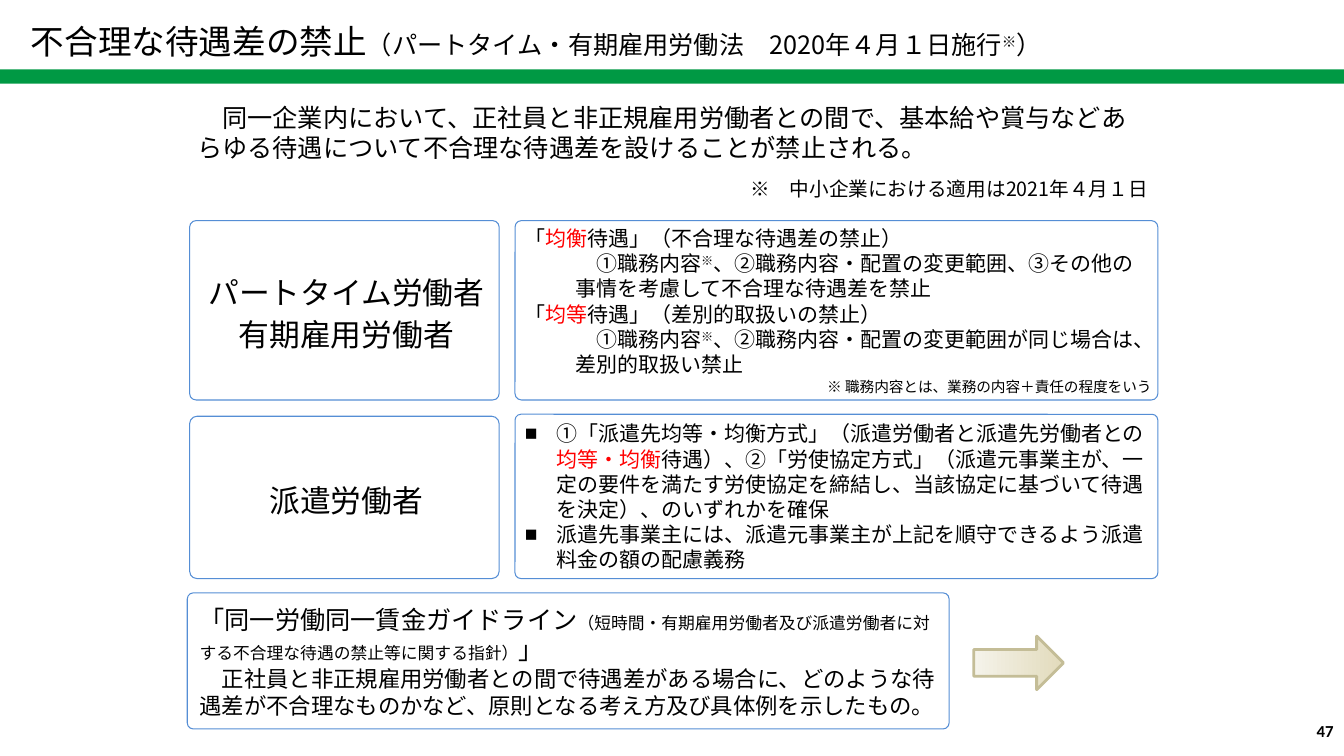
from lxml.etree import SubElement
from pptx import Presentation
from pptx.dml.color import RGBColor
from pptx.enum.shapes import MSO_SHAPE as Preset
from pptx.enum.text import MSO_ANCHOR as Anchor, MSO_AUTO_SIZE as AutoSize, PP_ALIGN as Align
from pptx.oxml.ns import qn
from pptx.util import Cm, Pt

BLACK = RGBColor(0x00, 0x00, 0x00)
RED = RGBColor(0xFF, 0x00, 0x00)
WHITE = RGBColor(0xFF, 0xFF, 0xFF)
BLUE = RGBColor(0x55, 0x8E, 0xD5)
GREEN = RGBColor(0x00, 0x99, 0x44)
TAN = RGBColor(0xC4, 0xBD, 0x97)
SAND = RGBColor(0xE2, 0xDB, 0xBC)
CREAM = RGBColor(0xF5, 0xF3, 0xEA)
FONT = "Noto Sans CJK JP"
LEFT_X, LEFT_W = 4.78, 7.8
RIGHT_X, RIGHT_W = 12.98, 16.2


def add_span(para, text, size, color=BLACK, raised=False, bold=False, font=FONT):
    """Add one formatted run to a paragraph."""
    span = para.add_run()
    span.text = text
    span.font.size = Pt(size)
    span.font.bold = bold
    span.font.color.rgb = color
    span.font.name = font
    properties = span.font._element
    SubElement(properties, qn("a:ea"), typeface=font)
    if raised:
        properties.set("baseline", "30000")


def add_para(box, spans, pitch, align=Align.LEFT, before=0, margin=0, hanging=0, bullet=None):
    """Add a paragraph of (text, size, options) spans, using the first empty one."""
    frame = box.text_frame
    first = frame.paragraphs[0]
    para = frame.add_paragraph() if first.runs else first
    para.alignment = align
    para.line_spacing = Pt(pitch)
    para.space_before = Pt(before)
    properties = para._p.get_or_add_pPr()
    properties.set("marL", str(Cm(margin)))
    properties.set("indent", str(-Cm(hanging)))
    if bullet:
        SubElement(properties, qn("a:buChar"), char=bullet)
    for text, size, *options in spans:
        add_span(para, text, size, **(options[0] if options else {}))


def set_frame(box, anchor=Anchor.TOP, insets=(0.25, 0.13, 0.25, 0.13)):
    """Set wrapping, anchor and insets of a text frame."""
    frame = box.text_frame
    frame.word_wrap = True
    frame.auto_size = AutoSize.NONE
    frame.vertical_anchor = anchor
    frame.margin_left, frame.margin_top, frame.margin_right, frame.margin_bottom = map(Cm, insets)


def add_text_box(page, left, top, width, height):
    """Add a wrapping text box."""
    box = page.shapes.add_textbox(Cm(left), Cm(top), Cm(width), Cm(height))
    set_frame(box)
    return box


def place(holder, left, top, width, height):
    """Move a placeholder and bring it in front of earlier shapes."""
    holder.left, holder.top, holder.width, holder.height = map(Cm, (left, top, width, height))
    holder._element.getparent().append(holder._element)


def add_preset(page, preset, left, top, width, height):
    """Add a preset shape without shadow."""
    shape = page.shapes.add_shape(preset, Cm(left), Cm(top), Cm(width), Cm(height))
    shape.shadow.inherit = False
    return shape


def add_panel(page, left, top, width, height, adjustment, fill=WHITE):
    """Add a rounded panel with a thin blue outline."""
    panel = add_preset(page, Preset.ROUNDED_RECTANGLE, left, top, width, height)
    panel.adjustments[0] = adjustment
    if fill is None:
        panel.fill.background()
    else:
        panel.fill.solid()
        panel.fill.fore_color.rgb = fill
    panel.line.color.rgb = BLUE
    panel.line.width = Pt(0.75)
    set_frame(panel, Anchor.MIDDLE, (0.2, 0.1, 0.1, 0.1))
    return panel


def add_label(page, top, height, adjustment, lines):
    """Add a worker category panel in the left column."""
    panel = add_panel(page, LEFT_X, top, LEFT_W, height, adjustment)
    for line in lines:
        add_para(panel, [(line, 22)], 30, Align.CENTER)


def add_treatment_panel(page):
    """Add the panel on balanced and equal treatment."""
    panel = add_panel(page, RIGHT_X, 5.56, RIGHT_W, 4.52, 0.036)
    rules = [
        ("均衡", "待遇」（不合理な待遇差の禁止）",
         "、②職務内容・配置の変更範囲、③その他の事情を考慮して不合理な待遇差を禁止"),
        ("均等", "待遇」（差別的取扱いの禁止）",
         "、②職務内容・配置の変更範囲が同じ場合は、差別的取扱い禁止"),
    ]
    for keyword, heading, detail in rules:
        add_para(panel, [("「", 15), (keyword, 15, {"color": RED}), (heading, 15)], 18)
        add_para(panel, [("　①職務内容", 15), ("※", 15, {"raised": True}), (detail, 15)],
                 18, margin=1.27)
    add_para(panel, [("※ 職務内容とは、業務の内容＋責任の程度をいう", 10.5)], 13, Align.RIGHT)


def add_dispatch_list(page, holder):
    """Add the panel on dispatched workers with its bulleted list."""
    bounds = (RIGHT_X, 10.44, RIGHT_W, 4.14)
    add_panel(page, *bounds, 0.036)
    place(holder, *bounds)
    set_frame(holder, Anchor.MIDDLE, (0.25, 0.1, 0.15, 0.1))
    items = [
        [("①「派遣先均等・均衡方式」（派遣労働者と派遣先労働者との", 15),
         ("均等・均衡", 15, {"color": RED}),
         ("待遇）、②「労使協定方式」（派遣元事業主が、一定の要件を満たす労使協定を締結し、"
          "当該協定に基づいて待遇を決定）、のいずれかを確保", 15)],
        [("派遣先事業主には、派遣元事業主が上記を順守できるよう派遣料金の額の配慮義務", 15)],
    ]
    for spans in items:
        add_para(holder, spans, 18, margin=0.79, hanging=0.79, bullet="■")


def add_intro(page):
    """Add the opening statement and its note."""
    box = add_text_box(page, 4.72, 2.46, 24.46, 2.74)
    add_para(box, [("　同一企業内において、正社員と非正規雇用労働者との間で、基本給や賞与など"
                    "あらゆる待遇について不合理な待遇差を設けることが禁止される。", 18)], 21.5)
    add_para(box, [("※　中小企業における適用は2021年４月１日", 14)], 17, Align.RIGHT, before=10)


def add_guideline(page):
    """Add the guideline text and its outline."""
    box = add_text_box(page, 4.78, 15.11, 19.18, 3.18)
    add_para(box, [("「同一労働同一賃金ガイドライン", 18),
                   ("（短時間・有期雇用労働者及び派遣労働者に対する不合理な待遇の禁止等に関する指針）", 12),
                   ("」", 18)], 21.5)
    add_para(box, [("　正社員と非正規雇用労働者との間で待遇差がある場合に、どのような待遇差が"
                    "不合理なものかなど、原則となる考え方及び具体例を示したもの。", 16)], 19.2)
    add_panel(page, 4.72, 14.94, 19.2, 3.43, 0.045, fill=None)


def add_arrow(page):
    """Add the shaded block arrow."""
    arrow = add_preset(page, Preset.RIGHT_ARROW, 24.54, 16.03, 2.26, 1.35)
    arrow.fill.gradient()
    arrow.fill.gradient_angle = 180
    for stop, color, position in zip(arrow.fill.gradient_stops, (SAND, CREAM), (0, 1)):
        stop.color.rgb = color
        stop.position = position
    arrow.line.color.rgb = TAN
    arrow.line.width = Pt(2)


def add_heading(page):
    """Add the green bar and fill in the title."""
    bar = add_preset(page, Preset.RECTANGLE, 0, 1.75, 33.87, 0.36)
    bar.fill.solid()
    bar.fill.fore_color.rgb = GREEN
    bar.line.fill.background()
    title = page.shapes.title
    place(title, 0.53, 0.15, 27.5, 1.37)
    set_frame(title)
    add_para(title, [("不合理な待遇差の禁止", 24),
                     ("（パートタイム・有期雇用労働法　2020年４月１日施行", 18),
                     ("※", 18, {"raised": True}), ("）", 18)], 36)


def main():
    """Build the slide and save it."""
    deck = Presentation()
    deck.slide_width, deck.slide_height = Cm(33.87), Cm(19.05)
    page = deck.slides.add_slide(deck.slide_layouts[1])
    add_treatment_panel(page)
    add_dispatch_list(page, page.placeholders[1])
    add_label(page, 5.56, 4.52, 0.036, ["パートタイム労働者", "有期雇用労働者"])
    add_label(page, 10.49, 4.09, 0.045, ["派遣労働者"])
    add_intro(page)
    add_guideline(page)
    add_arrow(page)
    add_heading(page)
    number = add_text_box(page, 25.96, 18.03, 7.9, 1.02)
    add_para(number, [("47", 12, {"bold": True, "font": "Calibri"})], 14.4, Align.RIGHT)
    deck.save("out.pptx")


if __name__ == "__main__":
    main()
